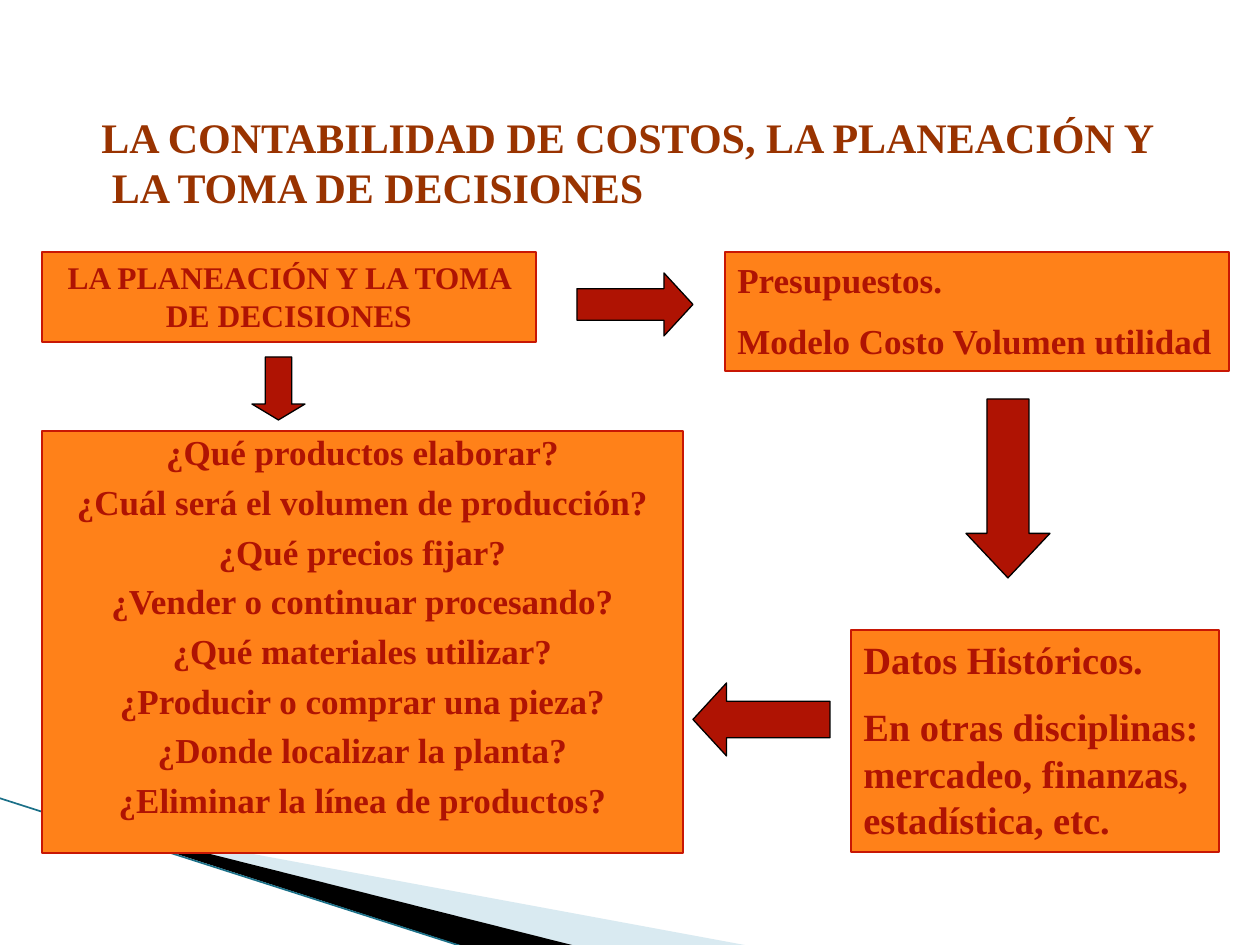
import pptx
import pptx.util
from pptx.dml.color import RGBColor
from pptx.enum.shapes import MSO_CONNECTOR, MSO_SHAPE
from pptx.enum.text import MSO_ANCHOR, PP_ALIGN
from pptx.oxml.ns import qn
from lxml import etree

PX = 914400 / 126
ORANGE = RGBColor(0xFF, 0x81, 0x19)
BORDER_RED = RGBColor(0xC8, 0x17, 0x04)
RED = RGBColor(0xAF, 0x13, 0x03)
BROWN = RGBColor(0x99, 0x33, 0x00)
BLACK = RGBColor(0, 0, 0)
PALE_BLUE = RGBColor(0xA0, 0xCB, 0xDC)
TEAL = RGBColor(0x1B, 0x70, 0x88)


def emu(*lengths):
    return [pptx.util.Emu(round(length * PX)) for length in lengths]


def write(shape, lines, size, color, align=PP_ALIGN.LEFT, gap=0, spacing=1.0):
    """Fill a shape with bold paragraphs, `gap` points apart."""
    frame = shape.text_frame
    frame.word_wrap = True
    frame.vertical_anchor = MSO_ANCHOR.TOP
    frame.text = "\n".join(lines)
    for index, paragraph in enumerate(frame.paragraphs):
        paragraph.alignment = align
        paragraph.line_spacing = spacing
        paragraph.space_before = pptx.util.Pt(gap if index else 0)
        paragraph.font.name = "Times New Roman"
        paragraph.font.size = pptx.util.Pt(size)
        paragraph.font.bold = True
        paragraph.font.color.rgb = color


deck = pptx.Presentation()
deck.slide_width, deck.slide_height = emu(1260, 945)
slide = deck.slides.add_slide(deck.slide_layouts[6])
shapes = slide.shapes

# Decorative wedges in the lower left corner
wedges = [
    ([(69, 820), (750, 946), (575, 946), (69, 819)], PALE_BLUE, 40),
    ([(67, 818), (576, 946), (469, 948), (68, 819)], BLACK, 100),
]
for points, color, opacity in wedges:
    builder = shapes.build_freeform(*points[0], scale=PX)
    builder.add_line_segments(points[1:], close=True)
    wedge = builder.convert_to_shape()
    wedge.shadow.inherit = False
    wedge.fill.solid()
    wedge.fill.fore_color.rgb = color
    wedge.line.fill.background()
    if opacity < 100:
        tint = wedge.fill._xPr.find(qn("a:solidFill"))[0]
        etree.SubElement(tint, qn("a:alpha"), val=str(opacity * 1000))

edge = shapes.add_connector(MSO_CONNECTOR.STRAIGHT, *emu(-1, 798, 467, 948))
edge.line.color.rgb = TEAL
edge.line.width = pptx.util.Pt(0.95)
etree.SubElement(edge._element.spPr, qn("a:effectLst"))

title = shapes.add_textbox(*emu(89, 105, 1081, 113))
write(title, ["LA CONTABILIDAD DE COSTOS, LA PLANEACIÓN Y\v LA TOMA DE DECISIONES"], 24, BROWN)

questions = [
    "¿Qué productos elaborar?",
    "¿Cuál será el volumen de producción?",
    "¿Qué precios fijar?",
    "¿Vender o continuar procesando?",
    "¿Qué materiales utilizar?",
    "¿Producir o comprar una pieza?",
    "¿Donde localizar la planta?",
    "¿Eliminar la línea de productos?",
]
tools = ["Presupuestos.", "Modelo Costo Volumen utilidad"]
sources = [
    "Datos Históricos.",
    "En otras disciplinas: mercadeo, finanzas, estadística, etc.",
]
boxes = [
    ((42, 252, 494, 90), ["LA PLANEACIÓN Y LA TOMA DE DECISIONES"], 18, PP_ALIGN.CENTER, 0, 1.0),
    ((42, 431, 641, 422), questions, 20, PP_ALIGN.CENTER, 8, 0.85),
    ((725, 252, 504, 119), tools, 20, PP_ALIGN.LEFT, 11, 1.0),
    ((851, 630, 368, 222), sources, 22, PP_ALIGN.LEFT, 12, 1.0),
]
for place, lines, size, align, gap, spacing in boxes:
    box = shapes.add_shape(MSO_SHAPE.RECTANGLE, *emu(*place))
    box.shadow.inherit = False
    box.fill.solid()
    box.fill.fore_color.rgb = ORANGE
    box.line.color.rgb = BORDER_RED
    box.line.width = pptx.util.Pt(0.75)
    write(box, lines, size, RED, align, gap, spacing)

arrows = [
    (MSO_SHAPE.RIGHT_ARROW, (577, 273, 116, 63), 0.46),
    (MSO_SHAPE.DOWN_ARROW, (966, 399, 84, 179), 0.53),
    (MSO_SHAPE.DOWN_ARROW, (252, 357, 53, 63), 0.3),
    (MSO_SHAPE.LEFT_ARROW, (693, 683, 137, 73), 0.46),
]
for direction, place, head in arrows:
    arrow = shapes.add_shape(direction, *emu(*place))
    arrow.adjustments[0] = 0.5
    arrow.adjustments[1] = head
    arrow.shadow.inherit = False
    arrow.fill.solid()
    arrow.fill.fore_color.rgb = RED
    arrow.line.color.rgb = BLACK
    arrow.line.width = pptx.util.Pt(0.75)

deck.save("out.pptx")
